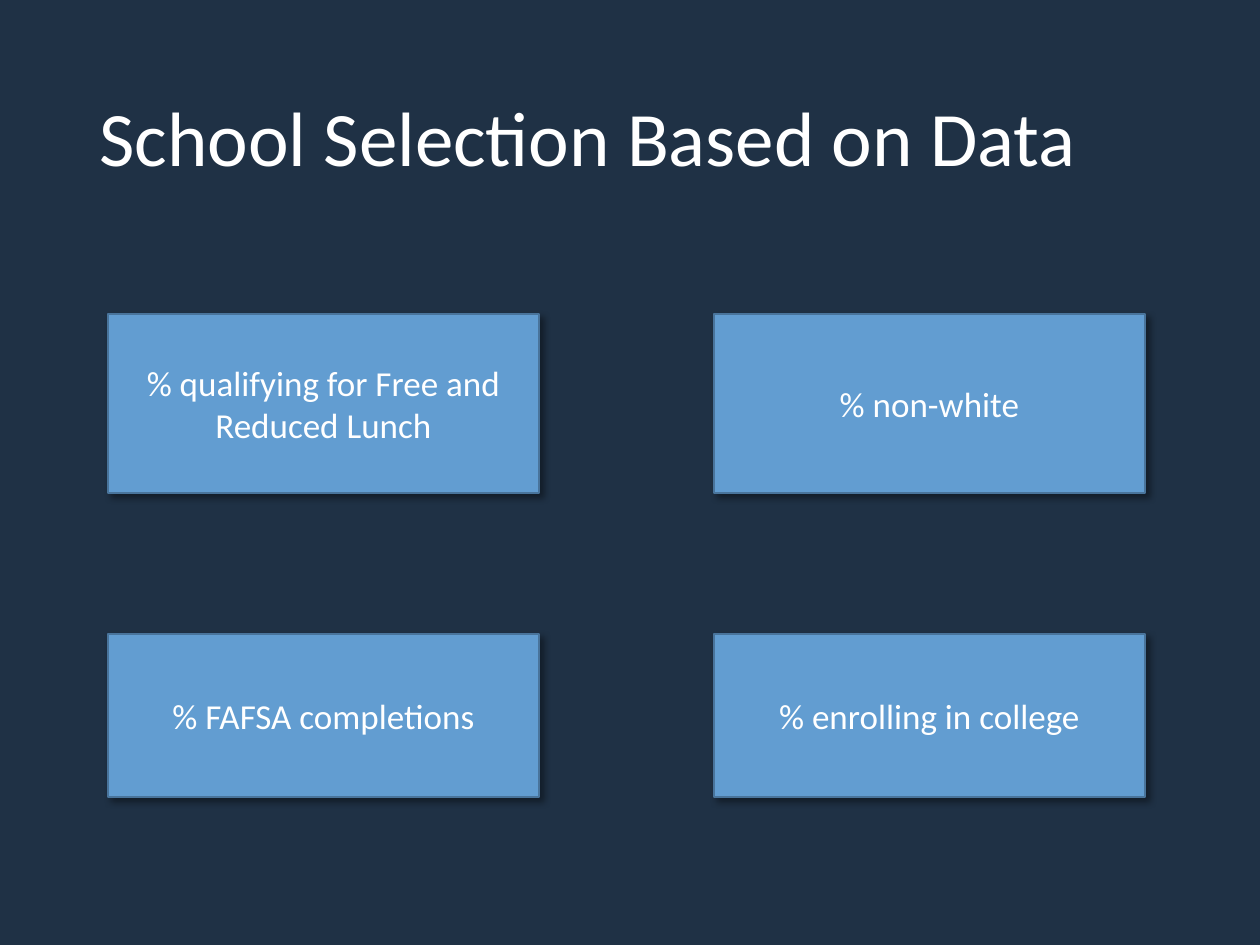
import dataclasses

import lxml.etree
import pptx
import pptx.dml.color
import pptx.enum.shapes
import pptx.enum.text
import pptx.oxml.ns
import pptx.util


@dataclasses.dataclass(frozen=True)
class Theme:
    background: str = "1F3145"
    box: str = "629DD1"
    border: str = "49749B"
    text: str = "FFFFFF"
    shadow: str = "000000"
    font: str = "Calibri"
    title_size: int = 44
    box_size: int = 20


THEME = Theme()
PX_PER_INCH = 126
COLUMNS = (108, 714)
BOX_WIDTH = 431
ROWS = (
    (314, 179, ("% qualifying for Free and Reduced Lunch", "% non-white")),
    (634, 163, ("% FAFSA completions", "% enrolling in college")),
)


def px(*lengths):
    return [pptx.util.Emu(round(n * 914400 / PX_PER_INCH)) for n in lengths]


def rgb(color):
    return pptx.dml.color.RGBColor.from_string(color)


def set_text(s, text, size, align):
    tf = s.text_frame
    tf.text = text
    tf.word_wrap = True
    tf.vertical_anchor = pptx.enum.text.MSO_ANCHOR.MIDDLE
    p = tf.paragraphs[0]
    p.alignment = align
    font = p.runs[0].font
    font.name = THEME.font
    font.size = pptx.util.Pt(size)
    font.color.rgb = rgb(THEME.text)
    return p


def add_shadow(s):
    s.shadow.inherit = False
    qn = pptx.oxml.ns.qn
    effects = s.element.spPr.find(qn("a:effectLst"))
    shadow = lxml.etree.SubElement(
        effects, qn("a:outerShdw"),
        blurRad=str(pptx.util.Pt(4)), dist=str(pptx.util.Pt(3)),
        dir=str(45 * 60000), algn="tl", rotWithShape="0",
    )
    color = lxml.etree.SubElement(shadow, qn("a:srgbClr"), val=THEME.shadow)
    lxml.etree.SubElement(color, qn("a:alpha"), val="40000")


def add_title(slide, text):
    s = slide.shapes.add_textbox(*px(87, 50, 1086, 183))
    p = set_text(s, text, THEME.title_size, pptx.enum.text.PP_ALIGN.LEFT)
    p.line_spacing = 0.9


def add_box(slide, text, left, top, height):
    s = slide.shapes.add_shape(
        pptx.enum.shapes.MSO_SHAPE.RECTANGLE, *px(left, top, BOX_WIDTH, height)
    )
    s.fill.solid()
    s.fill.fore_color.rgb = rgb(THEME.box)
    s.line.color.rgb = rgb(THEME.border)
    s.line.width = pptx.util.Pt(1)
    add_shadow(s)
    set_text(s, text, THEME.box_size, pptx.enum.text.PP_ALIGN.CENTER)


def main():
    prs = pptx.Presentation()
    prs.slide_width, prs.slide_height = px(1260, 945)
    slide = prs.slides.add_slide(prs.slide_layouts[6])
    slide.background.fill.solid()
    slide.background.fill.fore_color.rgb = rgb(THEME.background)
    add_title(slide, "School Selection Based on Data")
    for top, height, labels in ROWS:
        for left, label in zip(COLUMNS, labels):
            add_box(slide, label, left, top, height)
    prs.save("out.pptx")


if __name__ == "__main__":
    main()
